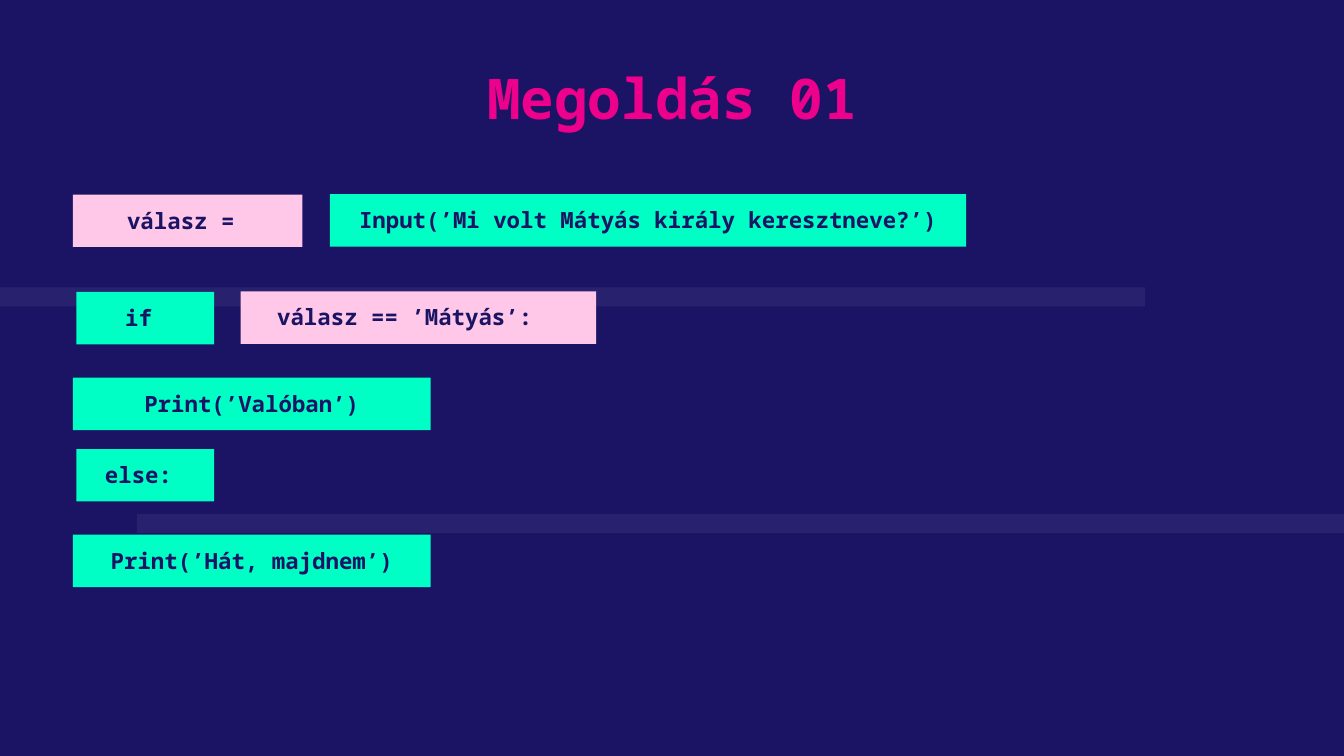
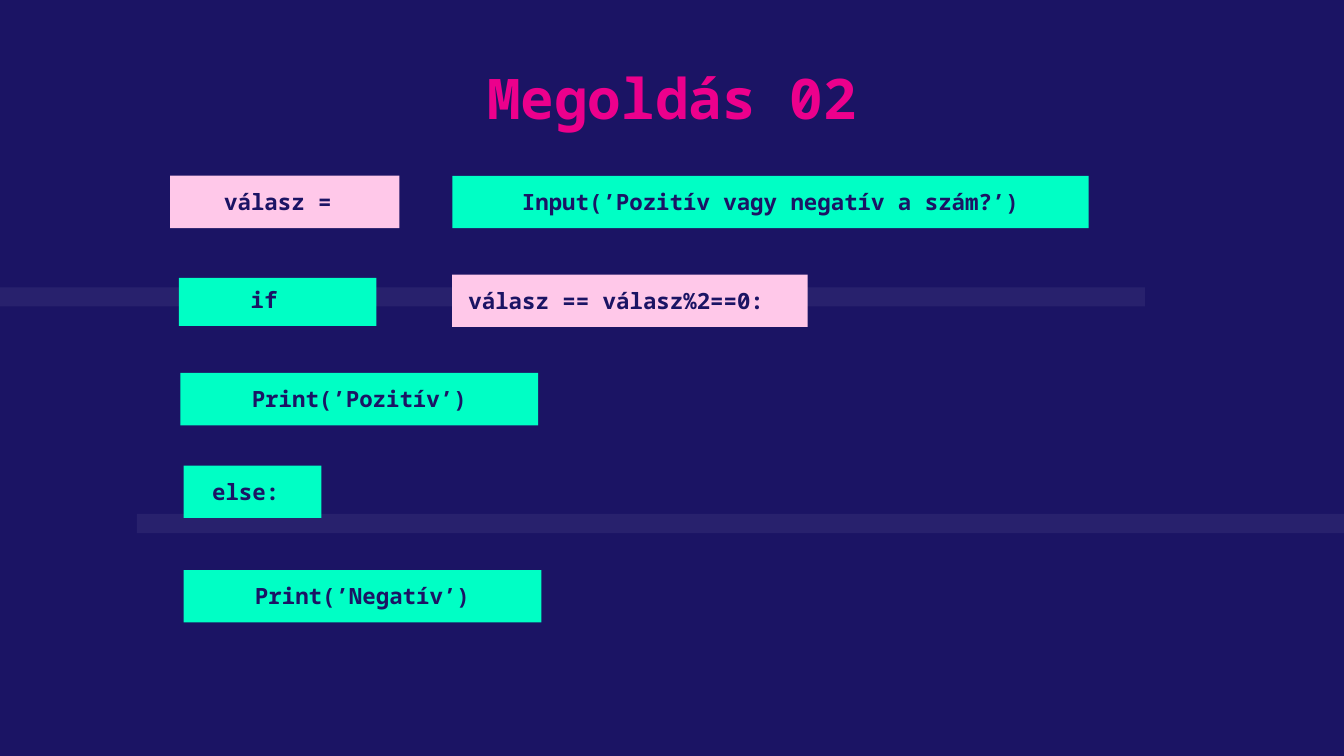
from dataclasses import dataclass
from typing import NamedTuple

from lxml.etree import SubElement
from pptx import Presentation
from pptx.dml.color import RGBColor
from pptx.enum.shapes import MSO_SHAPE
from pptx.enum.text import MSO_ANCHOR, PP_ALIGN
from pptx.oxml.ns import qn
from pptx.util import Pt


@dataclass(frozen=True)
class Theme:
    navy: str = "1B1464"
    magenta: str = "EC008C"
    mint: str = "00FFC5"
    pink: str = "FFC8E9"
    white: str = "FFFFFF"
    font: str = "Noto Sans Mono"
    title_size: float = 30
    code_size: float = 12
    inset: float = 7.2
    band_opacity: int = 6


class Box(NamedTuple):
    left: float
    top: float
    width: float
    height: float

    def inner(self, left, top, width, height):
        return Box(self.left + left, self.top + top, width, height)

    def lengths(self):
        return [Pt(value) for value in self]


class CodeBlock(NamedTuple):
    text: str
    color: str
    left: float
    top: float
    width: float
    height: float = 28.1
    blanks: int = 0


THEME = Theme()
PAGE = Box(0, 0, 720, 405)
BANDS = [Box(0, 153.9, 613.4, 10.3), Box(73.4, 275.3, 646.6, 10.3)]
# Block widths by role
ASSIGN, INPUT, CONDITION, PRINT, KEYWORD = 122.9, 340.9, 190.5, 191.6, 73.8

# Block positions are relative to the program's box
SOLUTIONS = [
    ("Megoldás 01", Box(39.1, 104, 600, 211), [
        CodeBlock("Input(’Mi volt Mátyás király keresztneve?’)", THEME.mint, 137.6, 0, INPUT),
        CodeBlock("válasz =", THEME.pink, 0, 0.2, ASSIGN, blanks=1),
        CodeBlock("if", THEME.mint, 1.9, 52.4, KEYWORD, blanks=1),
        CodeBlock("else:", THEME.mint, 1.9, 136.6, KEYWORD, blanks=1),
        CodeBlock("válasz == ’Mátyás’:", THEME.pink, 89.8, 52.1, CONDITION, blanks=2),
        CodeBlock("Print(’Hát, majdnem’)", THEME.mint, 0, 182.4, PRINT),
        CodeBlock("Print(’Valóban’)", THEME.mint, 0, 98.3, PRINT),
    ]),
    ("Megoldás 02", Box(91.1, 94.1, 600, 240), [
        CodeBlock("Input(’Pozitív vagy negatív a szám?’)", THEME.mint, 151.3, 0.1, INPUT),
        CodeBlock("válasz =", THEME.pink, 0, 0, ASSIGN, blanks=1),
        CodeBlock("if", THEME.mint, 4.8, 54.8, 105.8, 25.8, blanks=2),
        CodeBlock("else:", THEME.mint, 7.3, 155.3, KEYWORD, blanks=1),
        CodeBlock("válasz == válasz%2==0:", THEME.pink, 151.1, 53, CONDITION, blanks=2),
        CodeBlock("Print(’Negatív’)", THEME.mint, 7.3, 211.3, PRINT),
        CodeBlock("Print(’Pozitív’)", THEME.mint, 5.6, 105.7, PRINT),
    ]),
]


def add_rectangle(slide, box, color):
    shape = slide.shapes.add_shape(MSO_SHAPE.RECTANGLE, *box.lengths())
    shape.shadow.inherit = False
    shape.fill.solid()
    shape.fill.fore_color.rgb = RGBColor.from_string(color)
    shape.line.fill.background()
    return shape


def write_text(shape, text, size, color, anchor, wrap=True, blanks=0):
    """Centre bold text, moved left by half a character per blank."""
    frame = shape.text_frame
    frame.word_wrap = wrap
    frame.vertical_anchor = anchor
    frame.margin_left = frame.margin_top = frame.margin_bottom = Pt(THEME.inset)
    frame.margin_right = Pt(THEME.inset + 0.6 * size * blanks)
    paragraph = frame.paragraphs[0]
    paragraph.alignment = PP_ALIGN.CENTER
    run = paragraph.add_run()
    run.text = text
    run.font.name = THEME.font
    run.font.size = Pt(size)
    run.font.bold = True
    run.font.color.rgb = RGBColor.from_string(color)


def add_backdrop(slide, page):
    slide.background.fill.solid()
    slide.background.fill.fore_color.rgb = RGBColor.from_string(THEME.navy)
    for band in BANDS:
        shape = add_rectangle(slide, page.inner(*band), THEME.white)
        color = shape.fill._xPr.find(qn("a:solidFill"))[0]
        SubElement(color, qn("a:alpha")).set("val", str(THEME.band_opacity * 1000))


def add_title(slide, box, text):
    shape = slide.shapes.add_textbox(*box.lengths())
    write_text(shape, text, THEME.title_size, THEME.magenta, MSO_ANCHOR.TOP)


def add_program(slide, box, blocks):
    for block in blocks:
        place = box.inner(block.left, block.top, block.width, block.height)
        shape = add_rectangle(slide, place, block.color)
        write_text(shape, block.text, THEME.code_size, THEME.navy,
                   MSO_ANCHOR.BOTTOM, blanks=block.blanks)


def add_solution_slide(presentation, title, program_box, blocks):
    slide = presentation.slides.add_slide(presentation.slide_layouts[6])
    add_backdrop(slide, PAGE)
    add_title(slide, PAGE.inner(100.8, 26.7, 518.4, 52.6), title)
    add_program(slide, program_box, blocks)


def main():
    presentation = Presentation()
    presentation.slide_width = Pt(PAGE.width)
    presentation.slide_height = Pt(PAGE.height)
    for title, program_box, blocks in SOLUTIONS:
        add_solution_slide(presentation, title, program_box, blocks)
    presentation.save("out.pptx")


if __name__ == "__main__":
    main()
